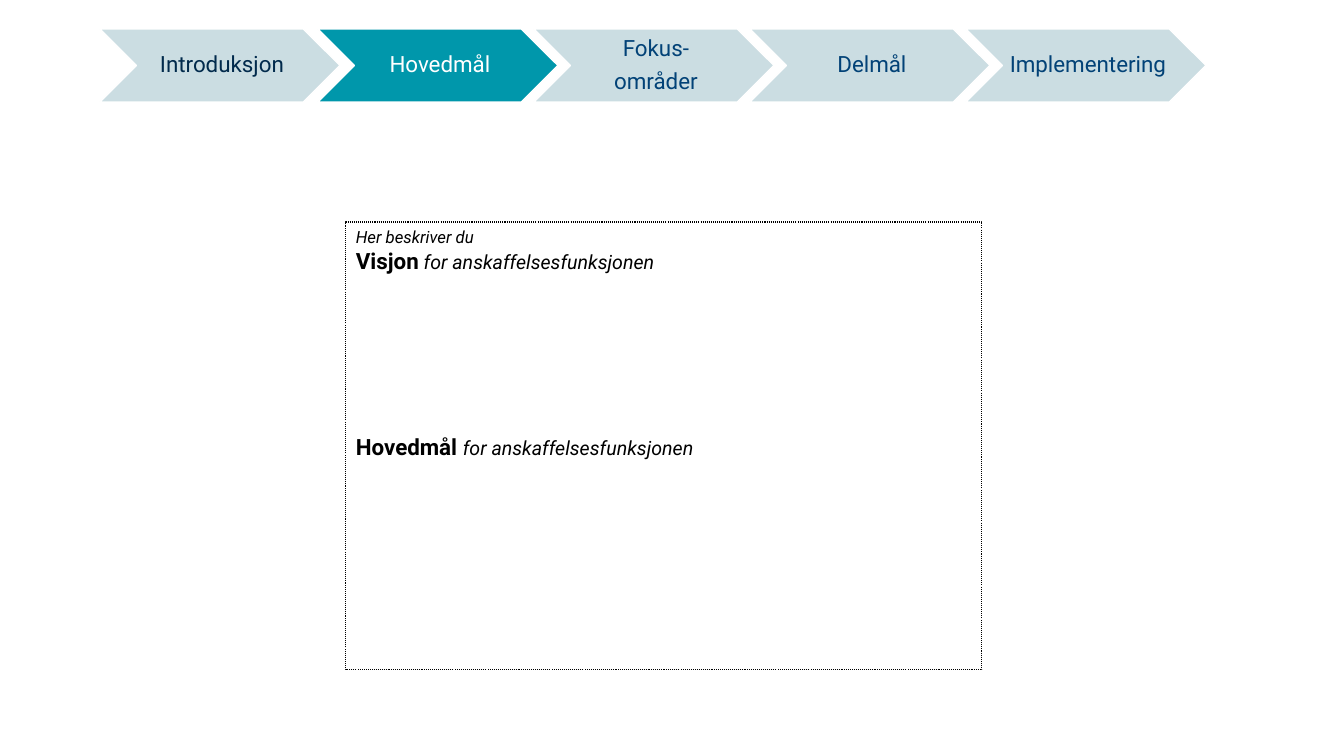
from pptx import Presentation
from pptx.dml.color import RGBColor
from pptx.enum.dml import MSO_LINE
from pptx.enum.shapes import MSO_SHAPE
from pptx.enum.text import MSO_ANCHOR, PP_ALIGN
from pptx.util import Pt

COLORS = {"pale": "CBDDE2", "teal": "0097AB", "navy": "012A4C",
          "blue": "024277", "white": "FFFFFF", "black": "000000"}
FONT = "Roboto"

# left edge, lines of the label, fill, text colour
STEP = 216
START = 318
STAGES = [
    (100, ["Introduksjon"], "pale", "navy"),
    (START, ["Hovedmål"], "teal", "white"),
    (START + STEP, ["Fokus-", "områder"], "pale", "blue"),
    (START + 2 * STEP, ["Delmål"], "pale", "blue"),
    (START + 3 * STEP, ["Implementering"], "pale", "blue"),
]

# space before in points, then runs: text, size, bold, italic
GOALS = [
    (0, [("Her beskriver du", 12, False, True)]),
    (0, [("Visjon", 16, True, False),
         (" for anskaffelsesfunksjonen", 14, False, True)]),
    (114, [("Hovedmål ", 16, True, False),
           (" for anskaffelsesfunksjonen".lstrip(), 14, False, True)]),
]


def px(n):
    return round(n * 914400 / 100.8)


def rgb(name):
    return RGBColor.from_string(COLORS[name])


def add_box(slide, kind, left, top, width, height, line, weight):
    box = slide.shapes.add_shape(kind, px(left), px(top), px(width), px(height))
    box.shadow.inherit = False
    box.line.color.rgb = rgb(line)
    box.line.width = Pt(weight)
    box.text_frame.word_wrap = True
    return box


def add_pars(frame, count):
    """Return count paragraphs, the frame's first one included."""
    return [frame.paragraphs[0]] + [frame.add_paragraph() for _ in range(count - 1)]


def add_stage(slide, left, lines, fill, ink):
    stage = add_box(slide, MSO_SHAPE.CHEVRON, left, 29, 240, 73, "white", 1)
    stage.fill.solid()
    stage.fill.fore_color.rgb = rgb(fill)
    frame = stage.text_frame
    frame.vertical_anchor = MSO_ANCHOR.MIDDLE
    frame.margin_left = px(6)
    frame.margin_right = frame.margin_top = frame.margin_bottom = px(2)
    for par, text in zip(add_pars(frame, len(lines)), lines):
        par.text = text
        par.alignment = PP_ALIGN.CENTER
        par.line_spacing = 0.9
        par.space_after = Pt(6)
        par.font.name = FONT
        par.font.size = Pt(16)
        par.font.color.rgb = rgb(ink)


def add_goals(slide):
    box = add_box(slide, MSO_SHAPE.RECTANGLE, 346, 222, 636, 448, "black", 0.75)
    box.fill.background()
    box.line.dash_style = MSO_LINE.ROUND_DOT
    frame = box.text_frame
    frame.vertical_anchor = MSO_ANCHOR.TOP
    for par, (gap, runs) in zip(add_pars(frame, len(GOALS)), GOALS):
        par.alignment = PP_ALIGN.LEFT
        if gap:
            par.space_before = Pt(gap)
        par.font.name = FONT
        par.font.color.rgb = rgb("black")
        for text, size, bold, italic in runs:
            run = par.add_run()
            run.text = text
            font = run.font
            font.name = FONT
            font.color.rgb = rgb("black")
            font.size, font.bold, font.italic = Pt(size), bold, italic


def main():
    deck = Presentation()
    deck.slide_width, deck.slide_height = px(1344), px(756)
    slide = deck.slides.add_slide(deck.slide_layouts[6])
    add_goals(slide)
    for stage in STAGES:
        add_stage(slide, *stage)
    deck.save("out.pptx")


if __name__ == "__main__":
    main()
